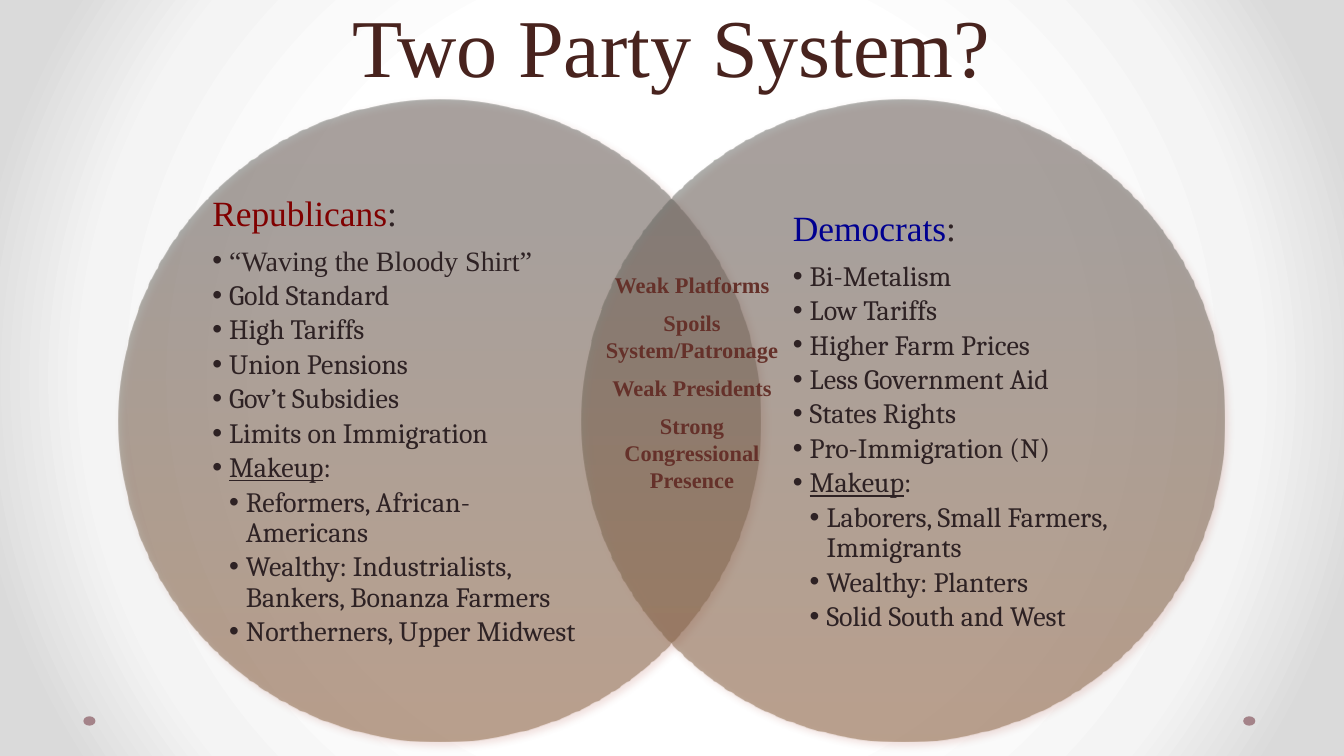
from dataclasses import dataclass

from lxml import etree
from pptx import Presentation
from pptx import util as u
from pptx.dml.color import RGBColor
from pptx.enum import shapes, text
from pptx.oxml import parse_xml
from pptx.oxml.ns import nsdecls, qn


@dataclass(frozen=True)
class Theme:
    serif: str = "Times New Roman"
    body: str = "Cambria"
    bullet: str = "Arial"
    title_color: str = "48231E"
    ink: str = "2E2224"
    shared_color: str = "65312A"
    dot: str = "A48389"
    shadow: str = "C3796F"
    title_size: int = 44
    heading_size: int = 19
    body_size: int = 15
    shared_size: int = 12
    background: tuple = ((50, "FFFFFF", 100), (76, "F4F4F4", 100), (92, "DADADA", 100))
    circle: tuple = ((0, "825E3A", 50), (80, "5E605A", 50), (100, "5F605B", 50))


@dataclass(frozen=True)
class Party:
    name: str
    color: str
    circle_left: float
    text_left: float
    text_inset: float
    policies: tuple
    makeup: tuple
    first_font: str


THEME = Theme()
CIRCLE_TOP, CIRCLE_SIZE = 0.74, 4.78
BULLET_INDENT = 0.125

PARTIES = (
    Party("Republicans", "800000", 0.88, 1.55, 0.03,
          ("“Waving the Bloody Shirt”", "Gold Standard", "High Tariffs",
           "Union Pensions", "Gov’t Subsidies", "Limits on Immigration"),
          ("Reformers, African-Americans",
           "Wealthy: Industrialists, Bankers, Bonanza Farmers",
           "Northerners, Upper Midwest"), THEME.serif),
    Party("Democrats", "000090", 4.33, 5.69, 0.21,
          ("Bi-Metalism", "Low Tariffs", "Higher Farm Prices",
           "Less Government Aid", "States Rights", "Pro-Immigration (N)"),
          ("Laborers, Small Farmers, Immigrants", "Wealthy: Planters",
           "Solid South and West"), THEME.body),
)
SHARED = ("Weak Platforms", "Spoils System/Patronage", "Weak Presidents",
          "Strong Congressional Presence")


def gradient(stops: tuple, direction: str):
    """Build a gradient fill from (position, colour, opacity) stops."""
    stop_xml = "".join(
        f'<a:gs pos="{position * 1000}"><a:srgbClr val="{color}">'
        f'<a:alpha val="{opacity * 1000}"/></a:srgbClr></a:gs>'
        for position, color, opacity in stops)
    return parse_xml(f'<a:gradFill {nsdecls("a")} rotWithShape="1">'
                     f'<a:gsLst>{stop_xml}</a:gsLst>{direction}</a:gradFill>')


def add_ellipse(slide, left: float, top: float, width: float, height: float):
    shape = slide.shapes.add_shape(
        shapes.MSO_SHAPE.OVAL, *map(u.Inches, (left, top, width, height)))
    shape.shadow.inherit = False
    shape.line.fill.background()
    return shape


def add_venn_circle(slide, left: float) -> None:
    shape = add_ellipse(slide, left, CIRCLE_TOP, CIRCLE_SIZE, CIRCLE_SIZE)
    properties = shape._element.spPr
    properties.insert(2, gradient(THEME.circle, '<a:lin ang="16200000" scaled="0"/>'))
    properties.find(qn("a:effectLst")).append(parse_xml(
        f'<a:outerShdw {nsdecls("a")} blurRad="{u.Pt(4)}" dist="{u.Pt(3)}" '
        f'dir="2700000" rotWithShape="0"><a:srgbClr val="{THEME.shadow}">'
        '<a:alpha val="43000"/></a:srgbClr></a:outerShdw>'))


def add_text_frame(slide, left: float, top: float, width: float, height: float,
                   anchor=text.MSO_ANCHOR.TOP):
    box = slide.shapes.add_textbox(*map(u.Inches, (left, top, width, height)))
    frame = box.text_frame
    frame.word_wrap = True
    frame.vertical_anchor = anchor
    return frame


def add_run(paragraph, content: str, *, size: int, color: str, font: str = THEME.body,
            bold: bool = False, underline: bool = False) -> None:
    run = paragraph.add_run()
    run.text = content
    run.font.name = font
    run.font.size = u.Pt(size)
    run.font.bold = bold
    run.font.underline = underline
    run.font.color.rgb = RGBColor.from_string(color)


def add_paragraph(frame, *, align=text.PP_ALIGN.LEFT, line_spacing=None,
                  after_percent: int = 0, bullet: str = "", margin: float = 0,
                  hanging: float = 0, level: int = 0):
    first = frame.paragraphs[0]
    paragraph = first if not first.runs else frame.add_paragraph()
    paragraph.alignment = align
    paragraph.level = level
    paragraph.line_spacing = line_spacing
    properties = paragraph._p.get_or_add_pPr()
    if after_percent:
        after = etree.SubElement(properties, qn("a:spcAft"))
        etree.SubElement(after, qn("a:spcPct")).set("val", str(after_percent * 1000))
    if bullet:
        properties.set("marL", str(u.Inches(margin)))
        properties.set("indent", str(-u.Inches(hanging)))
        etree.SubElement(properties, qn("a:buFont")).set("typeface", THEME.bullet)
        etree.SubElement(properties, qn("a:buChar")).set("char", bullet)
    return paragraph


def add_bullet(frame, level: int):
    return add_paragraph(frame, line_spacing=0.9, after_percent=15, bullet="•",
                         margin=BULLET_INDENT * level, hanging=BULLET_INDENT, level=level)


def add_party(slide, party: Party) -> None:
    add_venn_circle(slide, party.circle_left)
    frame = add_text_frame(slide, party.text_left, 1.31, 2.76, 3.66,
                           anchor=text.MSO_ANCHOR.MIDDLE)
    frame.margin_left = u.Inches(party.text_inset)
    frame.margin_right = frame.margin_top = frame.margin_bottom = 0
    heading = add_paragraph(frame, line_spacing=0.9, after_percent=35)
    for content, color in ((party.name, party.color), (":", THEME.ink)):
        add_run(heading, content, size=THEME.heading_size, color=color, font=THEME.serif)

    body = {"size": THEME.body_size, "color": THEME.ink}
    for index, policy in enumerate(party.policies):
        font = THEME.body if index else party.first_font
        add_run(add_bullet(frame, 1), policy, font=font, **body)
    makeup = add_bullet(frame, 1)
    add_run(makeup, "Makeup", underline=True, **body)
    add_run(makeup, ":", **body)
    for group in party.makeup:
        add_run(add_bullet(frame, 2), group, **body)


def main() -> None:
    presentation = Presentation()
    presentation.slide_width = u.Inches(10)
    presentation.slide_height = u.Inches(10 * 9 / 16)
    slide = presentation.slides.add_slide(presentation.slide_layouts[6])

    # Background and corner dots
    slide.background.fill.solid()
    background = slide._element.cSld.bg.bgPr
    background.replace(background[0], gradient(
        THEME.background,
        '<a:path path="circle"><a:fillToRect l="50000" t="50000" r="50000" b="50000"/></a:path>'))
    for left in (9.25, 0.62):
        dot = add_ellipse(slide, left, 5.33, 0.09, 0.07)
        dot.fill.solid()
        dot.fill.fore_color.rgb = RGBColor.from_string(THEME.dot)

    # Title
    frame = add_text_frame(slide, 0.5, -0.07, 9, 0.82, anchor=text.MSO_ANCHOR.BOTTOM)
    title = add_paragraph(frame, align=text.PP_ALIGN.CENTER, line_spacing=u.Pt(58))
    add_run(title, "Two Party System?", size=THEME.title_size,
            color=THEME.title_color, font=THEME.serif)

    # Venn circles with their lists
    for party in PARTIES:
        add_party(slide, party)

    # Common ground in the overlap
    frame = add_text_frame(slide, 4.08, 1.97, 1.83, 1.77)
    for content in SHARED:
        paragraph = add_paragraph(frame, align=text.PP_ALIGN.CENTER, bullet=" ",
                                  margin=0.31, hanging=0.31)
        paragraph.space_after = u.Pt(6)
        add_run(paragraph, content, size=THEME.shared_size, color=THEME.shared_color,
                font=THEME.serif, bold=True)

    presentation.save("out.pptx")


if __name__ == "__main__":
    main()
